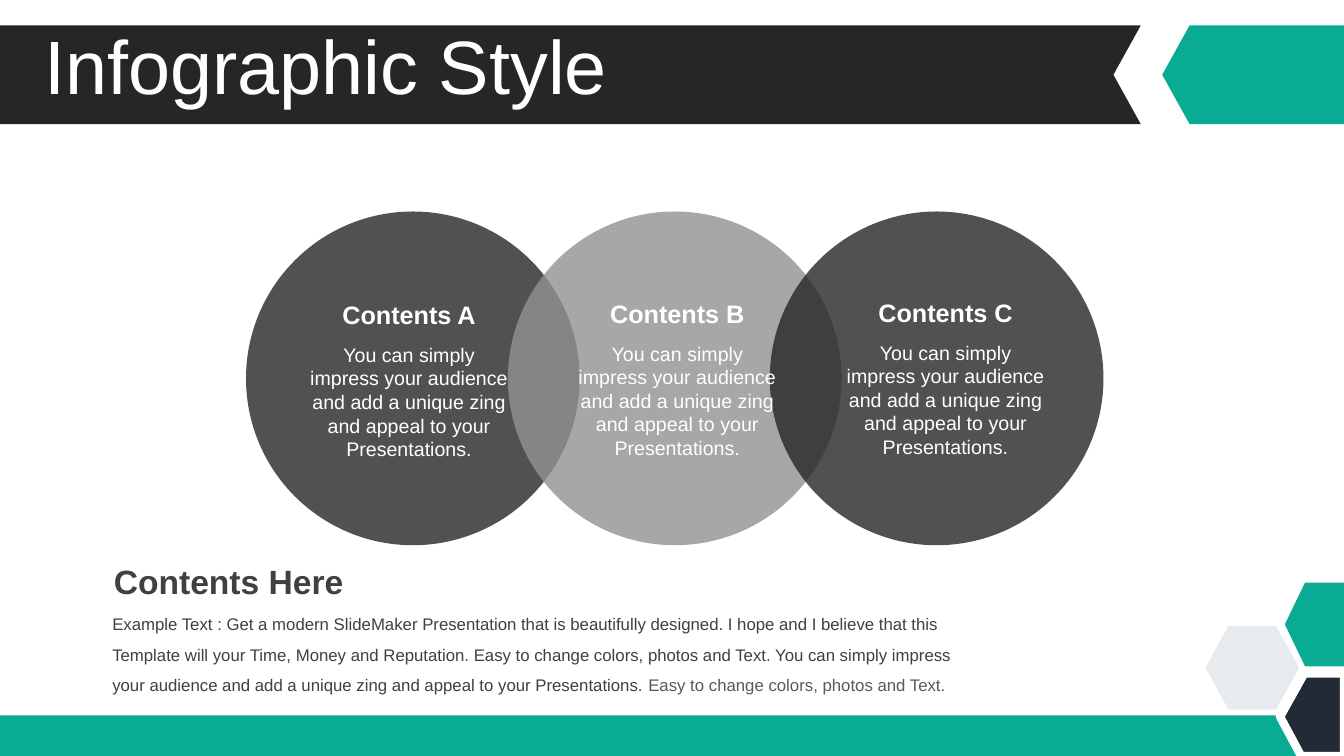
from dataclasses import dataclass
from lxml.etree import SubElement
from pptx import Presentation
from pptx.dml.color import RGBColor as Rgb
from pptx.enum.shapes import MSO_SHAPE as Kind
from pptx.enum.text import MSO_ANCHOR as Anchor, MSO_AUTO_SIZE as Fit, PP_ALIGN as Align
from pptx.oxml.ns import qn
from pptx.util import Cm, Pt


@dataclass(frozen=True)
class Theme:
    font: str = "Arial"
    green: str = "09AB93"
    black: str = "262626"
    navy: str = "222A35"
    mist: str = "D9DEE2"
    gray: str = "929292"
    white: str = "FFFFFF"
    ink: str = "404040"
    soft: str = "595959"
    title: int = 54
    lead: int = 24
    head: int = 18
    body: int = 14
    note: int = 12


THEME = Theme()
WIDE, HIGH = 33.87, 19.05
BLURB = ("You can simply impress your audience and add a unique zing "
         "and appeal to your Presentations.")
NOTE = ("Example Text : Get a modern SlideMaker Presentation that is beautifully designed. "
        "I hope and I believe that this Template will your Time, Money and Reputation. "
        "Easy to change colors, photos and Text. You can simply impress your audience "
        "and add a unique zing and appeal to your Presentations. ")
EXTRA = "Easy to change colors, photos and Text."


def apply(item, values):
    for name, value in values.items():
        setattr(item, name, value)


def paint(shape, color, alpha=100, edge=None):
    shape.shadow.inherit = False
    shape.fill.solid()
    shape.fill.fore_color.rgb = Rgb.from_string(color)
    if alpha < 100:
        tint = shape.element.spPr.find(".//" + qn("a:srgbClr"))
        SubElement(tint, qn("a:alpha"), val=str(alpha * 1000))
    if edge:
        shape.line.color.rgb = Rgb.from_string(edge)
        shape.line.width = Pt(6)
    else:
        shape.line.fill.background()


def preset(slide, kind, box, color, alpha=100):
    shape = slide.shapes.add_shape(kind, *map(Cm, box))
    paint(shape, color, alpha)


def poly(slide, box, points, color, alpha=100, edge=None):
    left, top = box[:2]
    first, *rest = [(Cm(left + x), Cm(top + y)) for x, y in points]
    pen = slide.shapes.build_freeform(*first, scale=1.0)
    pen.add_line_segments(rest, close=True)
    paint(pen.convert_to_shape(), color, alpha, edge)


def write(frame, runs, size, bold=False, **layout):
    para = frame.paragraphs[0]
    apply(para, layout)
    for text, color in runs:
        run = para.add_run()
        run.text = text
        apply(run.font, {"name": THEME.font, "size": Pt(size), "bold": bold})
        run.font.color.rgb = Rgb.from_string(color)


def label(slide, box, runs, size, inset=0.25, bold=False, **layout):
    frame = slide.shapes.add_textbox(*map(Cm, box)).text_frame
    apply(frame, {"word_wrap": True, "auto_size": Fit.SHAPE_TO_FIT_TEXT,
                  "margin_left": Cm(inset), "margin_right": Cm(inset),
                  "margin_top": Cm(0.13), "margin_bottom": Cm(0.13)})
    write(frame, runs, size, bold, **layout)


def corner(slide, box):
    left, top, wide, high = box
    cell, cut = 2.11, 0.58
    span = 2.36
    poly(slide, (left, top + 1.09),
         [(0, cell / 2), (cut, 0), (span - cut, 0), (span, cell / 2),
          (span - cut, cell), (cut, cell)], THEME.mist, 60)
    edge = wide - 2
    poly(slide, (left + 2, top),
         [(0.51, 0), (edge, 0), (edge, cell), (0.51, cell), (0, cell / 2)], THEME.green)
    preset(slide, Kind.RECTANGLE, (0, HIGH - 1.02, WIDE, 1.02), THEME.green)
    edge, tall = wide - 1.88, 2.08
    poly(slide, (left + 1.88, top + high - tall),
         [(edge, 0), (edge, tall), (0.53, tall), (0, 1.09), (0.61, 0)],
         THEME.navy, edge=THEME.white)


def banner(slide, box):
    left, top, wide, high = box
    end, tag, cut = 28.75, 29.29, 0.69
    poly(slide, (left, top),
         [(0, 0), (end, 0), (end - cut, high / 2), (end, high), (0, high)], THEME.black)
    edge = wide - tag
    poly(slide, (left + tag, top),
         [(cut, 0), (edge, 0), (edge, high), (cut, high), (0, high / 2)], THEME.green)
    title = slide.shapes.title
    apply(title, {"left": Cm(left + 0.86), "top": Cm(top + 0.5),
                  "width": Cm(32.16), "height": Cm(1.27)})
    apply(title.text_frame, {"vertical_anchor": Anchor.MIDDLE,
                             "auto_size": Fit.NONE, "word_wrap": True})
    write(title.text_frame, [("Infographic Style", THEME.white)], THEME.title,
          alignment=Align.LEFT, line_spacing=0.9, space_before=Pt(10))
    slide.shapes.element.append(title.element)


def rings(slide, box):
    left, top, wide, size = box
    step = (wide - size) / 2
    for i, color in enumerate((THEME.black, THEME.gray, THEME.black)):
        preset(slide, Kind.OVAL, (left + i * step, top, size, size), color, 80)
    for i, key in enumerate("ABC"):
        x, y = left + 1.34 + i * 6.76, top + 2.09 - i * 0.03
        label(slide, (x, y + 1.09, 5.54, 3.25), [(BLURB, THEME.white)],
              THEME.body, 0.21, alignment=Align.CENTER)
        label(slide, (x, y, 5.54, 1.02), [(f"Contents {key}", THEME.white)],
              THEME.head, bold=True, alignment=Align.CENTER)


def footer(slide, box):
    left, top, wide, high = box
    label(slide, (left, top + 1.09, wide, high - 1.09),
          [(NOTE, THEME.ink), (EXTRA, THEME.soft)], THEME.note, 0.21, line_spacing=1.5)
    label(slide, (left, top, wide, 1.27), [("Contents Here", THEME.ink)],
          THEME.lead, bold=True)


def main():
    deck = Presentation()
    apply(deck, {"slide_width": Cm(WIDE), "slide_height": Cm(HIGH)})
    slide = deck.slides.add_slide(deck.slide_layouts[5])
    corner(slide, (30.38, 14.68, 3.49, 4.37))
    banner(slide, (0, 0.64, WIDE, 2.49))
    rings(slide, (6.2, 5.33, 21.61, 8.41))
    footer(slide, (2.62, 14, 21.84, 3.55))
    deck.save("out.pptx")


if __name__ == "__main__":
    main()
